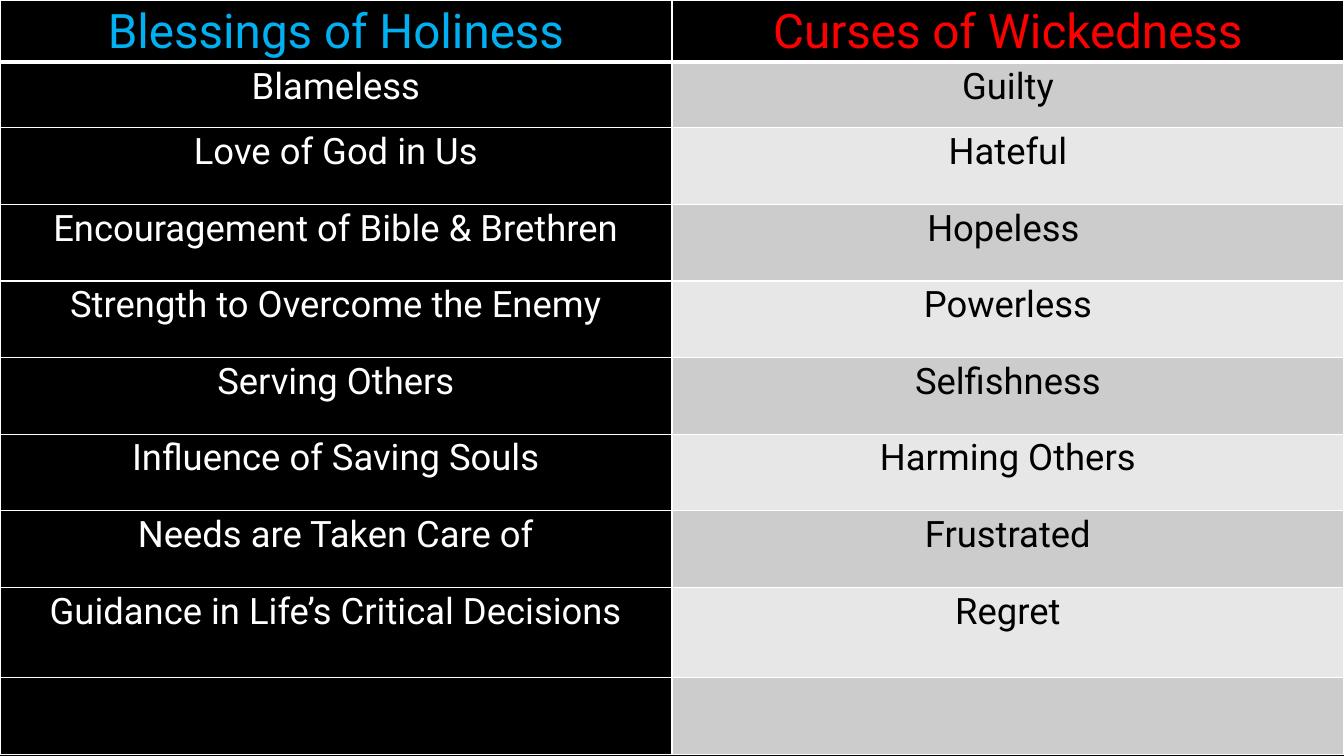
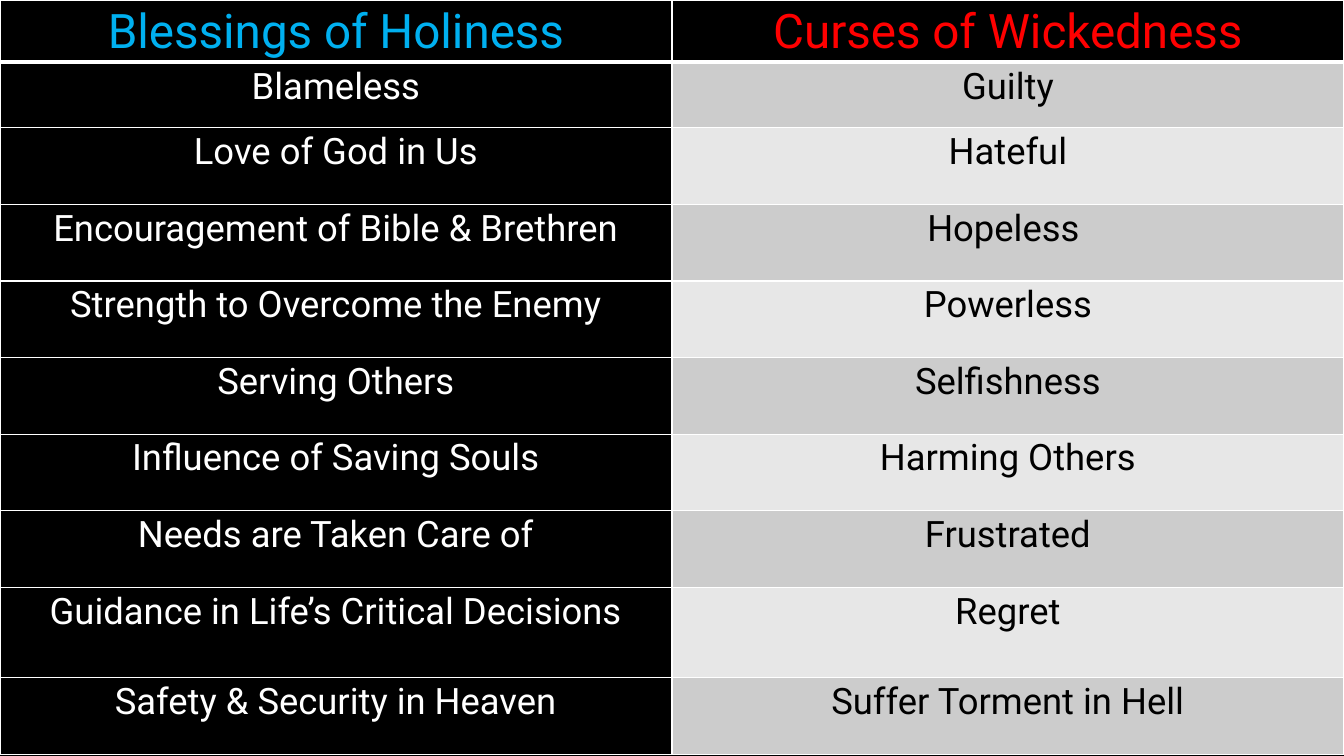
from lxml import etree
from pptx import Presentation
from pptx import util as u
from pptx.dml.color import RGBColor
from pptx.enum import text
from pptx.oxml import ns

HUES = {"black": "000000", "white": "FFFFFF", "blue": "00B0F0",
        "red": "FF0000", "dark": "CCCCCC", "light": "E7E7E7"}
FONT = "Roboto"
HEAD = ("Blessings of Holiness", "Curses of Wickedness")
PAIRS = [
    ("Blameless", "Guilty"),
    ("Love of God in Us", "Hateful"),
    ("Encouragement of Bible & Brethren", "Hopeless "),
    ("Strength to Overcome the Enemy", "Powerless"),
    ("Serving Others", "Selfishness"),
    ("Influence of Saving Souls", "Harming Others"),
    ("Needs are Taken Care of", "Frustrated"),
    ("Guidance in Life’s Critical Decisions", "Regret"),
]
LAST = ("Safety & Security in Heaven", "Suffer Torment in Hell")
TALL = [1.57, 1.65] + [1.93] * 6 + [2.28, 1.93]


def hue(name):
    return RGBColor.from_string(HUES[name])


def edge(cell, sides):
    """Draw white cell borders; sides maps L, R, T and B, in that order, to points."""
    props = cell._tc.get_or_add_tcPr()
    for spot, (side, width) in enumerate(sides.items()):
        line = etree.Element(ns.qn("a:ln" + side), w=str(u.Pt(width)))
        fill = etree.SubElement(line, ns.qn("a:solidFill"))
        etree.SubElement(fill, ns.qn("a:srgbClr"), val=HUES["white"])
        props.insert(spot, line)


deck = Presentation()
deck.slide_width, deck.slide_height = u.Cm(33.87), u.Cm(19.05)

for end in (("", ""), LAST):
    slide = deck.slides.add_slide(deck.slide_layouts[6])
    back = slide.background.fill
    back.solid()
    back.fore_color.rgb = hue("black")

    rows = [HEAD, *PAIRS, end]
    grid = slide.shapes.add_table(len(rows), 2, 0, 0, deck.slide_width,
                                  u.Cm(sum(TALL))).table
    grid.first_row = grid.horz_banding = False

    for r, words in enumerate(rows):
        grid.rows[r].height = u.Cm(TALL[r])
        band = "dark" if r % 2 else "light"
        if r == 0:
            size, looks = 34, [("black", "blue"), ("black", "red")]
        else:
            size, looks = 26, [("black", "white"), (band, "black")]
        for c, (fill, ink) in enumerate(looks):
            cell = grid.cell(r, c)
            cell.margin_left = cell.margin_right = u.Cm(0.18)
            cell.margin_top = cell.margin_bottom = 0
            cell.fill.solid()
            cell.fill.fore_color.rgb = hue(fill)
            edge(cell, {"L": 1, "R": 1, "T": 3 if r == 1 else 1,
                        "B": 3 if r == 0 else 1})
            para = cell.text_frame.paragraphs[0]
            para.text = words[c]
            para.alignment = text.PP_ALIGN.CENTER
            para.line_spacing = 1.07
            for run in para.runs:
                run.font.name, run.font.size = FONT, u.Pt(size)
                run.font.color.rgb = hue(ink)

deck.save("out.pptx")
